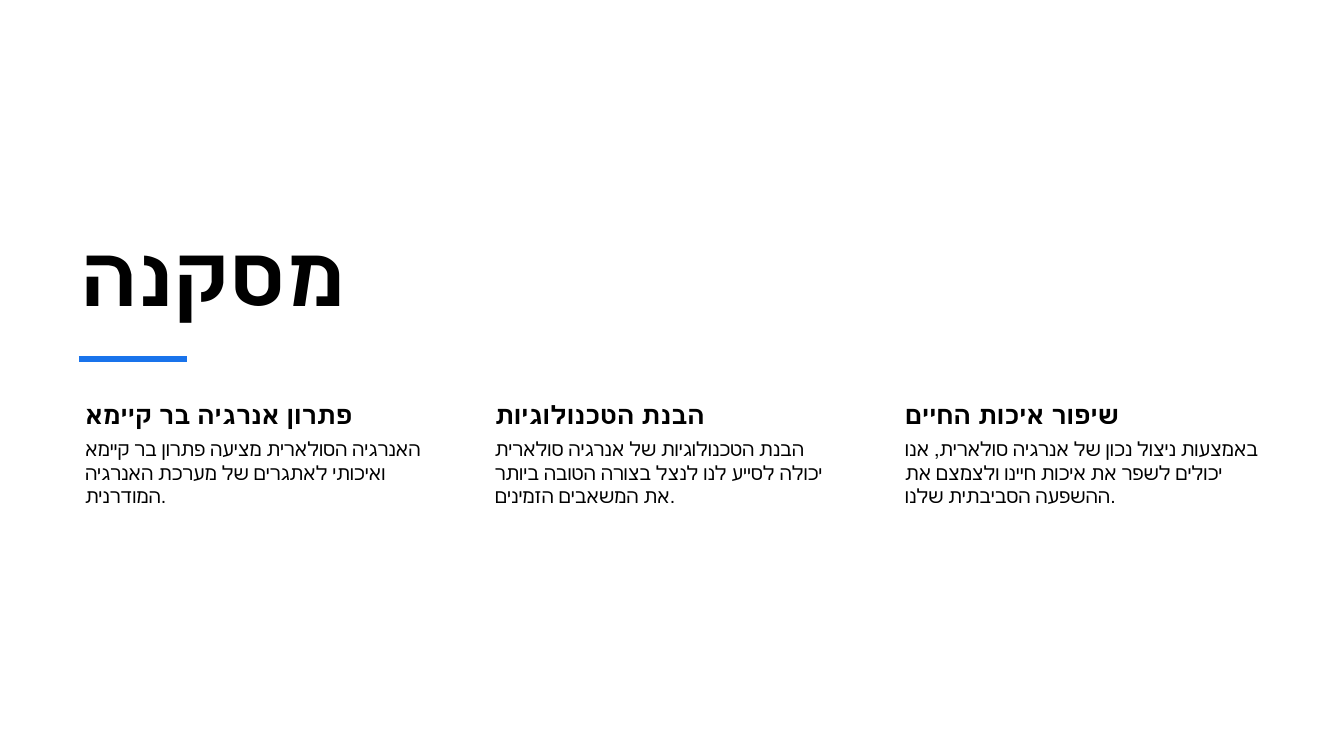
from lxml import etree
from pptx import Presentation
from pptx.dml.color import RGBColor
from pptx.enum.shapes import MSO_CONNECTOR, MSO_SHAPE
from pptx.enum.text import MSO_ANCHOR, PP_ALIGN
from pptx.oxml.ns import qn
from pptx.util import Pt

STRAIGHT = MSO_CONNECTOR.STRAIGHT
RECT = MSO_SHAPE.RECTANGLE
TOP, BOTTOM = MSO_ANCHOR.TOP, MSO_ANCHOR.BOTTOM
LEFT = PP_ALIGN.LEFT

THEME = {
    "font": "Arial",
    "paper": RGBColor(0xFF, 0xFF, 0xFF),
    "ink": RGBColor(0x00, 0x00, 0x00),
    "accent": RGBColor(0x19, 0x73, 0xEB),
    "title": 60,
    "head": 18,
    "body": 14,
    "rule": 4.5,
}

COLUMNS = [
    ("פתרון אנרגיה בר קיימא",
     "האנרגיה הסולארית מציעה פתרון בר קיימא ואיכותי לאתגרים של מערכת האנרגיה המודרנית."),
    ("הבנת הטכנולוגיות",
     "הבנת הטכנולוגיות של אנרגיה סולארית יכולה לסייע לנו לנצל בצורה הטובה ביותר את המשאבים הזמינים."),
    ("שיפור איכות החיים",
     "באמצעות ניצול נכון של אנרגיה סולארית, אנו יכולים לשפר את איכות חיינו ולצמצם את ההשפעה הסביבתית שלנו."),
]


def px(count):
    """Turn pixels, 100.8 to the inch, into EMU."""
    return round(count * 914400 / 100.8)


def write(frame, text, size, bold, anchor):
    """Put one left-aligned run into a text frame."""
    frame.word_wrap = True
    frame.vertical_anchor = anchor
    line = frame.paragraphs[0]
    line.alignment = LEFT
    run = line.add_run()
    run.text = text
    font = run.font
    font.name = THEME["font"]
    font.size = Pt(THEME[size])
    font.bold = bold
    font.color.rgb = THEME["ink"]


deck = Presentation()
deck.slide_width, deck.slide_height = px(1344), px(756)
slide = deck.slides.add_slide(deck.slide_layouts[5])

# White panel behind everything
panel = slide.shapes.add_shape(RECT, 0, 0, px(1344), px(756))
panel.shadow.inherit = False
panel.fill.solid()
panel.fill.fore_color.rgb = THEME["paper"]
panel.line.fill.background()

# Title, brought in front of the panel
title = slide.shapes.title
panel._element.addnext(title._element)
title.left, title.top = px(70), px(173)
title.width, title.height = px(900), px(155)
write(title.text_frame, "מסקנה", "title", True, BOTTOM)

# Three columns, each a heading over its text
for col, (head, body) in enumerate(COLUMNS):
    left = 70 + 410 * col
    for text, size, bold, top, height, pad in (
        (head, "head", True, 396, 39, 3),
        (body, "body", False, 435, 236, 2),
    ):
        box = slide.shapes.add_textbox(px(left), px(top), px(372), px(height))
        frame = box.text_frame
        frame.margin_left = px(15)
        frame.margin_top = frame.margin_right = frame.margin_bottom = px(pad)
        write(frame, text, size, bold, TOP)

# Accent rule under the title
rule = slide.shapes.add_connector(STRAIGHT, px(79), px(359), px(187), px(359))
rule.line.color.rgb = THEME["accent"]
rule.line.width = Pt(THEME["rule"])
etree.SubElement(rule._element.spPr, qn("a:effectLst"))

deck.save("out.pptx")
